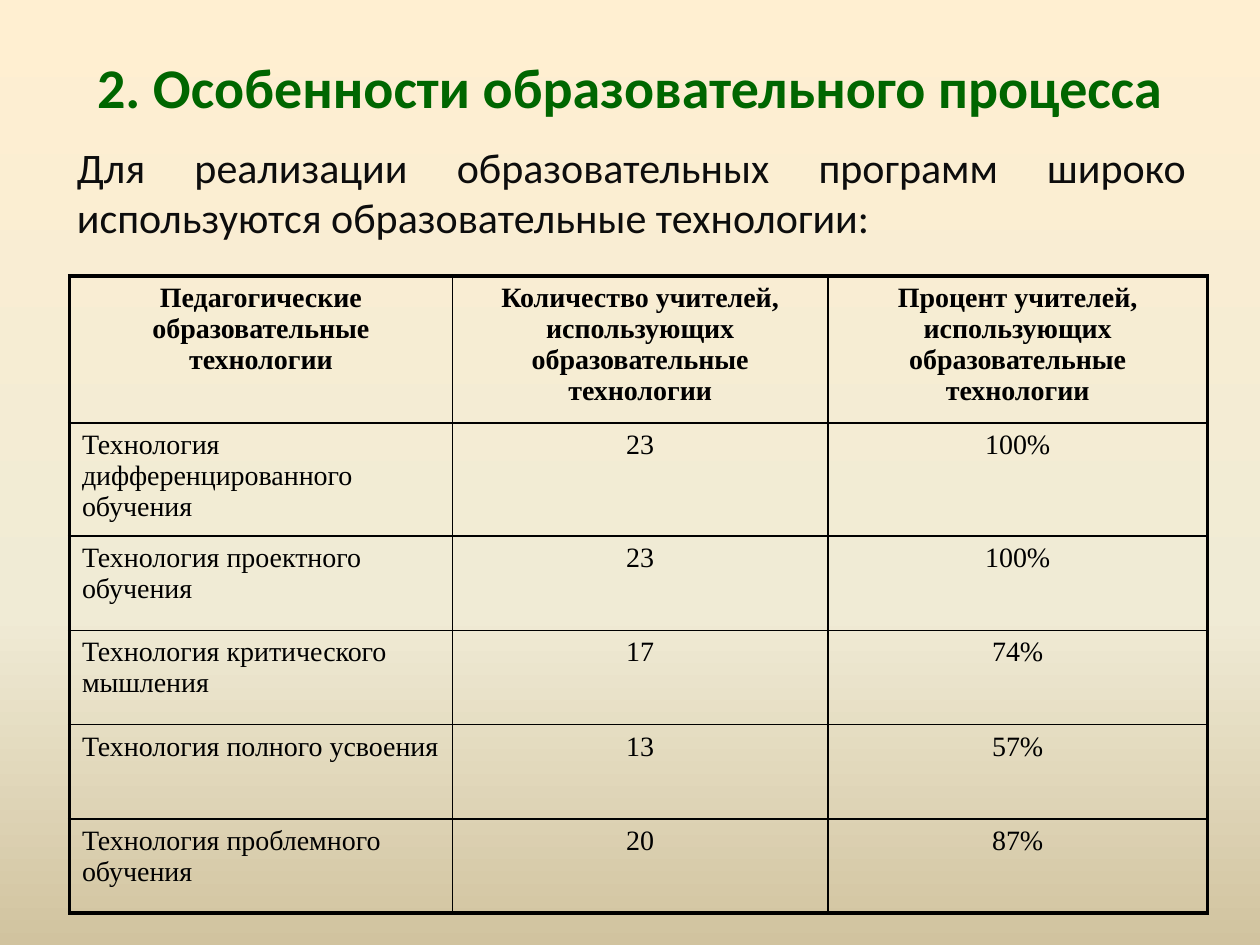
from dataclasses import dataclass

from lxml import etree
from pptx import Presentation, util as u
from pptx.dml.color import RGBColor
from pptx.enum import text
from pptx.oxml import ns


@dataclass(frozen=True)
class Theme:
    heading_font: str = "Calibri"
    table_font: str = "Times New Roman"
    title_color: str = "006600"
    intro_color: str = "0D0D0D"
    table_color: str = "000000"
    title_size: int = 32
    intro_size: int = 24
    table_size: int = 16
    outer_line: float = 2.25
    inner_line: float = 1
    background: tuple = ((0, "FFEFD1"), (65, "F0EBD5"), (100, "D1C39F"))


def write(frame, words, *, font, size, color, bold=False,
          align=text.PP_ALIGN.LEFT, anchor=text.MSO_ANCHOR.TOP):
    frame.word_wrap = True
    frame.vertical_anchor = anchor
    paragraph = frame.paragraphs[0]
    paragraph.alignment = align
    run = paragraph.add_run()
    run.text = words
    run.font.name = font
    run.font.size = u.Pt(size)
    run.font.bold = bold
    run.font.color.rgb = RGBColor.from_string(color)


def add_color(parent, color):
    etree.SubElement(parent, ns.qn("a:srgbClr"), val=color)


class SlideBuilder:
    def __init__(self, slide, theme):
        self.slide = slide
        self.theme = theme

    def background(self):
        fill = self.slide.background.fill
        fill.gradient()
        fill.gradient_angle = 270
        stops = next(self.slide.element.iter(ns.qn("a:gsLst")))
        for stop in list(stops):
            stops.remove(stop)
        for percent, color in self.theme.background:
            add_color(etree.SubElement(stops, ns.qn("a:gs"), pos=str(percent * 1000)), color)

    def textbox(self, words, left, top, width, height, **style):
        box = self.slide.shapes.add_textbox(*map(u.Cm, (left, top, width, height)))
        write(box.text_frame, words, font=self.theme.heading_font, **style)

    def borders(self, cell, outer_sides):
        """Draw all four cell edges, thick on the outer sides."""
        properties = cell._tc.get_or_add_tcPr()
        for index, side in enumerate("LRTB"):
            points = self.theme.outer_line if side in outer_sides else self.theme.inner_line
            line = etree.Element(ns.qn(f"a:ln{side}"), w=str(u.Pt(points)))
            add_color(etree.SubElement(line, ns.qn("a:solidFill")), self.theme.table_color)
            properties.insert(index, line)

    def table(self, rows, left, top, widths, heights):
        table = self.slide.shapes.add_table(
            len(rows), len(widths), u.Cm(left), u.Cm(top),
            u.Cm(sum(widths)), u.Cm(sum(heights))).table
        table.first_row = table.horz_banding = False
        for column, width in zip(table.columns, widths):
            column.width = u.Cm(width)
        for row, height in zip(table.rows, heights):
            row.height = u.Cm(height)

        last_row, last_column = len(rows) - 1, len(widths) - 1
        for r, values in enumerate(rows):
            for c, words in enumerate(values):
                cell = table.cell(r, c)
                cell.fill.background()
                is_name = r > 0 and c == 0
                write(cell.text_frame, words, font=self.theme.table_font,
                      size=self.theme.table_size, color=self.theme.table_color, bold=r == 0,
                      align=text.PP_ALIGN.LEFT if is_name else text.PP_ALIGN.CENTER)
                edges = {"L": c == 0, "R": c == last_column, "T": r == 0, "B": r == last_row}
                self.borders(cell, [side for side, outer in edges.items() if outer])


TECHNOLOGIES = [
    ("Педагогические образовательные технологии",
     "Количество учителей, использующих образовательные технологии",
     "Процент учителей, использующих образовательные технологии"),
    ("Технология дифференцированного обучения", "23", "100%"),
    ("Технология проектного обучения", "23", "100%"),
    ("Технология критического мышления", "17", "74%"),
    ("Технология полного усвоения", "13", "57%"),
    ("Технология проблемного обучения", "20", "87%"),
]


def main():
    deck = Presentation()
    deck.slide_width, deck.slide_height = u.Cm(25.4), u.Cm(19.05)
    theme = Theme()
    builder = SlideBuilder(deck.slides.add_slide(deck.slide_layouts[6]), theme)
    builder.background()
    builder.textbox("Для реализации образовательных программ широко "
                    "используются образовательные технологии:",
                    1.3, 2.72, 22.86, 14.3, size=theme.intro_size,
                    color=theme.intro_color, align=text.PP_ALIGN.JUSTIFY)
    builder.textbox("2. Особенности образовательного процесса",
                    1.27, 0.76, 22.86, 1.96, size=theme.title_size,
                    color=theme.title_color, bold=True,
                    align=text.PP_ALIGN.CENTER, anchor=text.MSO_ANCHOR.MIDDLE)
    builder.table(TECHNOLOGIES, 1.4, 5.56, widths=(7.72, 7.57, 7.65),
                  heights=(2.16, 2.26) + (1.9,) * 4)
    deck.save("out.pptx")


if __name__ == "__main__":
    main()
